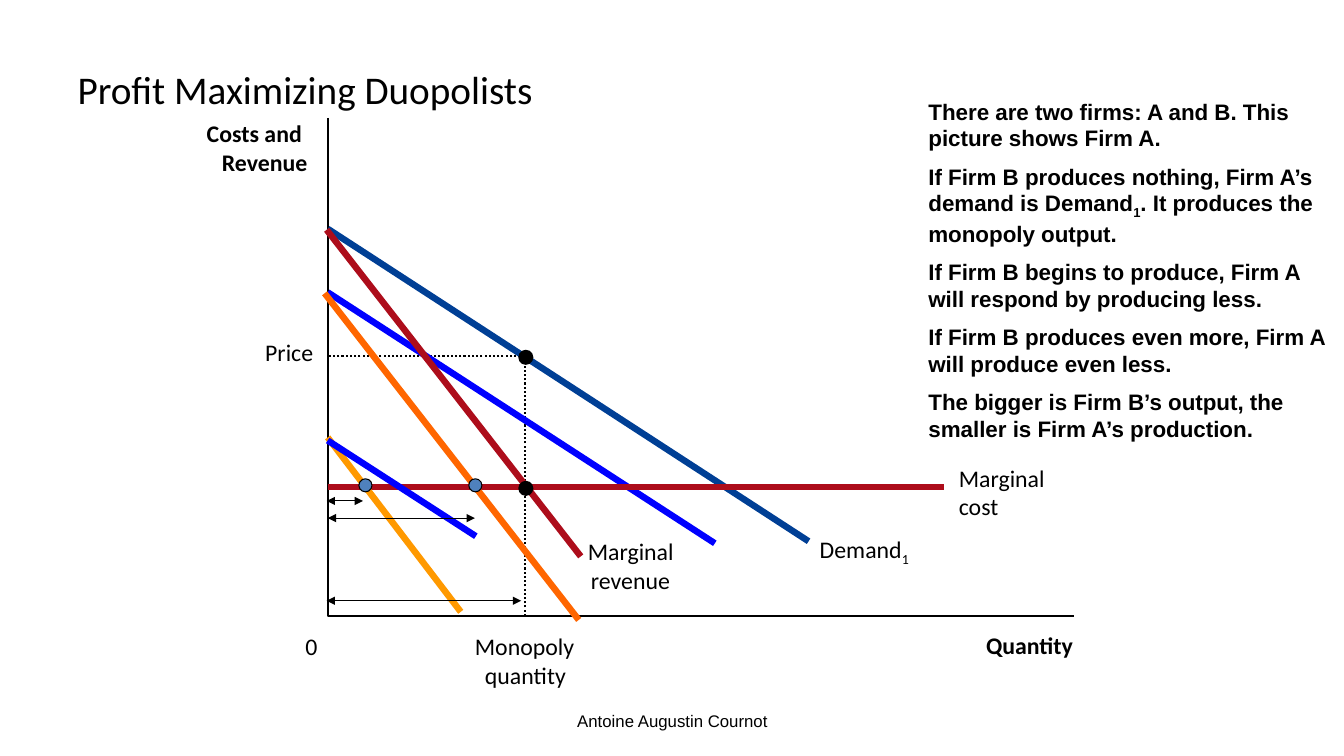
from lxml import etree
from pptx import Presentation
from pptx.dml.color import RGBColor
from pptx.enum import dml, shapes, text
from pptx.oxml import ns
from pptx.util import Inches, Pt

BLACK = RGBColor(0x00, 0x00, 0x00)
NAVY = RGBColor(0x00, 0x3F, 0x95)
BLUE = RGBColor(0x00, 0x00, 0xFF)
RED = RGBColor(0xAD, 0x0D, 0x1B)
ORANGE = RGBColor(0xFF, 0x66, 0x00)
AMBER = RGBColor(0xFF, 0x99, 0x00)
STEEL = RGBColor(0x4F, 0x81, 0xBD)

ORIGIN_X, ORIGIN_Y = 3.25, 6.11
MONOPOLY_X, PRICE_Y, COST_Y = 5.21, 3.53, 4.83

presentation = Presentation()
presentation.slide_width = Inches(13.33)
presentation.slide_height = Inches(7.5)
slide = presentation.slides.add_slide(presentation.slide_layouts[5])


def add_text(left, top, width, height, paragraphs, size, font, bold=False):
    """Add a text box; an underscore puts the next character in subscript."""
    box = slide.shapes.add_textbox(Inches(left), Inches(top), Inches(width), Inches(height))
    frame = box.text_frame
    for index, words in enumerate(paragraphs):
        paragraph = frame.paragraphs[0] if index == 0 else frame.add_paragraph()
        paragraph.font.size = Pt(size)
        paragraph.font.name = font
        paragraph.font.bold = bold
        paragraph.font.color.rgb = BLACK
        before, _, after = words.partition("_")
        paragraph.add_run().text = before
        if after:
            subscript = paragraph.add_run()
            subscript.text = after[0]
            subscript.font._element.set("baseline", "-25000")
        if after[1:]:
            paragraph.add_run().text = after[1:]
    return frame


def add_line(x1, y1, x2, y2, color, width):
    connector = slide.shapes.add_connector(
        shapes.MSO_CONNECTOR.STRAIGHT, Inches(x1), Inches(y1), Inches(x2), Inches(y2))
    connector.line.color.rgb = color
    connector.line.width = Pt(width)
    etree.SubElement(connector._element.spPr, ns.qn("a:effectLst"))
    return connector


# Title
title = slide.shapes.title
title.left, title.top = Inches(0.67), Inches(0.3)
title.width, title.height = Inches(12), Inches(1.25)
title.text_frame.text = "Profit Maximizing Duopolists"
title.text_frame.vertical_anchor = text.MSO_ANCHOR.MIDDLE
paragraph = title.text_frame.paragraphs[0]
paragraph.alignment = text.PP_ALIGN.LEFT
paragraph.line_spacing = 0.8
paragraph.font.size = Pt(28)
paragraph.font.name = "Calibri"
paragraph.font.color.rgb = BLACK

# Footer
footer = add_text(4.56, 6.95, 4.22, 0.4, ["Antoine Augustin Cournot"], 12, "Arial")
footer.word_wrap = True
footer.vertical_anchor = text.MSO_ANCHOR.MIDDLE
footer.paragraphs[0].alignment = text.PP_ALIGN.CENTER

# Axes and dotted guides to the monopoly price and quantity
for points, dash in [
    ([(ORIGIN_X, 1.17), (ORIGIN_X, ORIGIN_Y), (10.65, ORIGIN_Y)], None),
    ([(MONOPOLY_X, ORIGIN_Y), (MONOPOLY_X, PRICE_Y), (ORIGIN_X, PRICE_Y)],
     dml.MSO_LINE.ROUND_DOT),
]:
    corners = [(Inches(x), Inches(y)) for x, y in points]
    builder = slide.shapes.build_freeform(*corners[0])
    builder.add_line_segments(corners[1:], close=False)
    outline = builder.convert_to_shape()
    outline.shadow.inherit = False
    outline.fill.background()
    outline.line.color.rgb = BLACK
    outline.line.width = Pt(1.5)
    outline.line.dash_style = dash

# Demand, marginal revenue and marginal cost curves
for x1, y1, x2, y2, color in [
    (3.25, 2.9, 7.09, 5.39, BLUE),
    (3.25, 2.27, 8.02, 5.37, NAVY),
    (3.24, 2.28, 5.76, 5.52, RED),
    (ORIGIN_X, COST_Y, 9.36, COST_Y, RED),
    (3.22, 2.91, 5.74, 6.15, ORANGE),
    (3.25, 4.34, 4.57, 6.07, AMBER),
    (3.25, 4.37, 4.72, 5.32, BLUE),
]:
    add_line(x1, y1, x2, y2, color, 4.63)

# Output arrows
for left, right, y in [(3.24, 5.17, 5.96), (3.25, 4.71, 5.14), (3.24, 3.6, 4.97)]:
    arrow = add_line(left, y, right, y, BLACK, 0.75)
    line_xml = arrow.line._get_or_add_ln()
    for end in ("a:headEnd", "a:tailEnd"):
        etree.SubElement(line_xml, ns.qn(end), type="triangle")

# Dots at the optimal points
for left, top, size, color in [
    (5.14, 3.47, 0.15, BLACK),
    (5.14, 4.77, 0.15, BLACK),
    (3.56, 4.75, 0.13, STEEL),
    (4.65, 4.75, 0.13, STEEL),
]:
    dot = slide.shapes.add_shape(
        shapes.MSO_SHAPE.OVAL, Inches(left), Inches(top), Inches(size), Inches(size))
    dot.shadow.inherit = False
    dot.fill.solid()
    dot.fill.fore_color.rgb = color
    if color == BLACK:
        dot.line.fill.background()
    else:
        dot.line.color.rgb = BLACK
        dot.line.width = Pt(0.75)

# Chart labels
for left, top, width, words, bold in [
    (2.05, 1.18, 0.95, "Costs and", True),
    (2.2, 1.47, 0.85, "Revenue", True),
    (9.78, 6.26, 0.87, "Quantity", True),
    (3.03, 6.27, 0.12, "0", False),
    (2.63, 3.35, 0.48, "Price", False),
    (4.71, 6.27, 0.99, "Monopoly", False),
    (4.81, 6.55, 0.81, "quantity", False),
    (8.13, 5.3, 0.9, "Demand_1", False),
    (5.83, 5.32, 0.86, "Marginal", False),
    (5.86, 5.61, 0.79, "revenue", False),
    (9.51, 4.6, 0.86, "Marginal", False),
    (9.51, 4.88, 0.4, "cost", False),
]:
    label = add_text(left, top, width, 0.29, [words], 17, "Calibri", bold)
    label.word_wrap = False
    label.margin_left = label.margin_right = label.margin_top = label.margin_bottom = 0

# Explanation
explanation = add_text(9.11, 0.92, 4.14, 3.58, [
    "There are two firms: A and B. This picture shows Firm A.",
    "If Firm B produces nothing, Firm A’s demand is Demand_1. It produces the monopoly output.",
    "If Firm B begins to produce, Firm A will respond by producing less.",
    "If Firm B produces even more, Firm A will produce even less.",
    "The bigger is Firm B’s output, the smaller is Firm A’s production.",
], 16, "Arial", True)
explanation.word_wrap = True
for paragraph in explanation.paragraphs[1:]:
    paragraph.space_before = Pt(8)

presentation.save("out.pptx")
